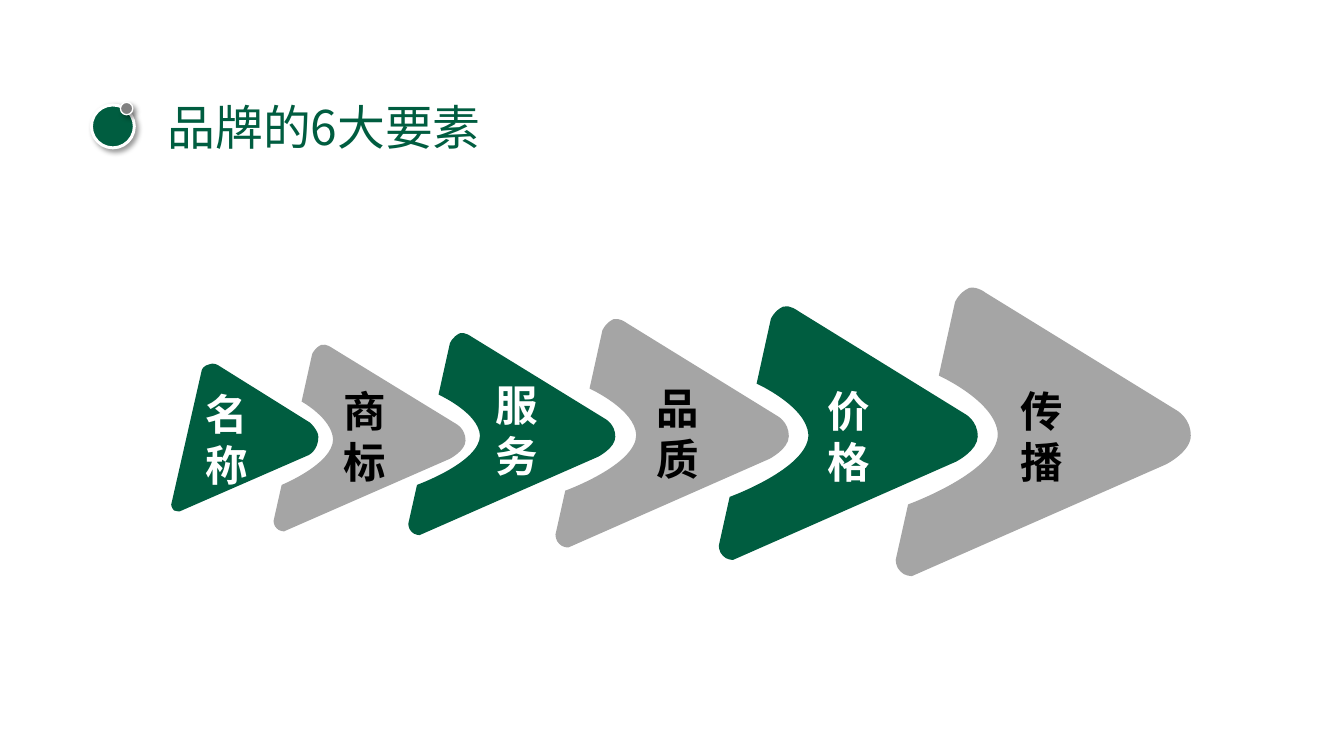
from dataclasses import dataclass

from lxml import etree
from pptx import Presentation
from pptx.dml.color import RGBColor
from pptx.enum.shapes import MSO_SHAPE
from pptx.oxml.ns import qn
from pptx.shapes.autoshape import Shape
from pptx.shapes.shapetree import SlideShapes
from pptx.util import Cm, Pt

OVAL = MSO_SHAPE.OVAL

Point = tuple[float, float]
Bend = list[Point]


@dataclass(frozen=True)
class Theme:
    green: RGBColor = RGBColor(0x00, 0x5D, 0x40)
    gray: RGBColor = RGBColor(0xA5, 0xA5, 0xA5)
    dark: RGBColor = RGBColor(0x80, 0x80, 0x80)
    white: RGBColor = RGBColor(0xFF, 0xFF, 0xFF)
    black: RGBColor = RGBColor(0x00, 0x00, 0x00)
    head: Pt = Pt(36)
    label: Pt = Pt(32)
    latin: str = "Calibri"
    asian: str = "Noto Sans CJK SC"


THEME = Theme()


@dataclass(frozen=True)
class Box:
    """A place on the slide, in centimetres."""
    left: float
    top: float
    width: float
    height: float

    def lengths(self) -> tuple[Cm, Cm, Cm, Cm]:
        return Cm(self.left), Cm(self.top), Cm(self.width), Cm(self.height)


@dataclass(frozen=True)
class Arrow:
    text: str
    box: Box
    bends: list[Bend]
    label: Box


@dataclass(frozen=True)
class Dot:
    box: Box
    fill: RGBColor
    border: float


def chevron(notch: float) -> list[Bend]:
    """Bends in percent of the box: start, pull, middle, pull, end."""
    return [
        [(95.1, 42.8), (100, 45.4), (100, 51.6), (100, 57.2), (91.6, 61.5)],
        [(5.5, 100), (2.9, 100), (1.6, 98.4), (0, 97), (0, 94.4)],
        [(4.2, 75.3), (notch, 64.1), (notch, 51), (notch - 0.6, 39.8), (14.6, 30.9)],
        [(20.1, 5.6), (21.4, 2.3), (24.9, 0.7), (27.5, 0), (30.4, 2.3)],
    ]


WEDGE = [
    [(94.2, 40.4), (100, 45.5), (100, 50), (100, 59), (93.5, 62.2)],
    [(5.8, 100), (3.2, 100), (1.9, 99.4), (0, 97.4), (0, 95.5)],
    [(20.8, 5.1), (22.1, 1.9), (26, 1.3), (28.6, 0), (31.8, 1.9)],
]
SHALLOW = chevron(31)
DEEP = chevron(34.6)

ARROWS = [
    Arrow("名称", Box(4.55, 9.63, 3.91, 3.96), WEDGE, Box(5.21, 10.19, 1.6, 3)),
    Arrow("商标", Box(7.27, 9.13, 5.1, 4.99), SHALLOW, Box(8.88, 10.11, 1.78, 3)),
    Arrow("服务", Box(10.85, 8.82, 5.5, 5.4), DEEP, Box(12.92, 9.96, 1.4, 3)),
    Arrow("品质", Box(14.76, 8.44, 6.2, 6.11), DEEP, Box(17.2, 10.03, 1.4, 3)),
    Arrow("价格", Box(19.1, 8.1, 6.88, 6.78), DEEP, Box(21.74, 10.11, 1.4, 3)),
    Arrow("传播", Box(23.8, 7.6, 7.84, 7.71), DEEP, Box(26.87, 10.11, 1.73, 3)),
]
DOTS = [
    Dot(Box(2.43, 2.79, 1.14, 1.14), THEME.green, 2.25),
    Dot(Box(3.2, 2.72, 0.33, 0.33), THEME.dark, 1),
]


def add_text(shapes: SlideShapes, text: str, box: Box, size: Pt, color: RGBColor,
             latin: str, bold: bool) -> None:
    frame = shapes.add_textbox(*box.lengths()).text_frame
    frame.word_wrap = True
    frame.text = text
    run = frame.paragraphs[0].runs[0]
    font = run.font
    font.size, font.bold, font.name = size, bold, latin
    font.color.rgb = color
    props = run._r.get_or_add_rPr()
    etree.SubElement(props, qn("a:ea"), typeface=THEME.asian)


def round_bends(shape: Shape, count: int) -> None:
    """Turn the last six of each bend's seven nodes into two Bezier curves."""
    track = next(shape._element.iter(qn("a:path")))
    nodes = list(track)
    for bend in range(count):
        for first in (7 * bend + 1, 7 * bend + 4):
            curve = etree.Element(qn("a:cubicBezTo"))
            nodes[first].addprevious(curve)
            for node in nodes[first:first + 3]:
                curve.append(node[0])
                track.remove(node)


def add_arrow(shapes: SlideShapes, arrow: Arrow, fill: RGBColor, ink: RGBColor) -> None:
    box = arrow.box
    points = [(Cm(box.left + box.width * x / 100), Cm(box.top + box.height * y / 100))
              for start, pull, mid, push, end in arrow.bends
              for x, y in (start, start, pull, mid, push, end, end)]
    builder = shapes.build_freeform(*points[0], scale=1.0)
    builder.add_line_segments(points[1:], close=True)
    shape = builder.convert_to_shape()
    round_bends(shape, len(arrow.bends))
    shape.shadow.inherit = False
    shape.fill.solid()
    shape.fill.fore_color.rgb = fill
    shape.line.fill.background()
    add_text(shapes, arrow.text, arrow.label, THEME.label, ink, THEME.latin, True)


def cast_shadow(shape: Shape) -> None:
    shape.shadow.inherit = False
    effects = shape._element.spPr.find(qn("a:effectLst"))
    outer = etree.SubElement(effects, qn("a:outerShdw"), blurRad=str(Pt(4)),
                             dist=str(Pt(3)), dir=str(45 * 60000), rotWithShape="0")
    color = etree.SubElement(outer, qn("a:srgbClr"), val=str(THEME.black))
    etree.SubElement(color, qn("a:alpha"), val="40000")


def add_dot(shapes: SlideShapes, dot: Dot) -> None:
    shape = shapes.add_shape(OVAL, *dot.box.lengths())
    shape.fill.solid()
    shape.fill.fore_color.rgb = dot.fill
    shape.line.color.rgb = THEME.white
    shape.line.width = Pt(dot.border)
    cast_shadow(shape)


def main() -> None:
    deck = Presentation()
    deck.slide_width, deck.slide_height = Cm(35.71), Cm(20.09)
    shapes = deck.slides.add_slide(deck.slide_layouts[6]).shapes
    for index, arrow in enumerate(ARROWS):
        if index % 2:
            add_arrow(shapes, arrow, THEME.gray, THEME.black)
        else:
            add_arrow(shapes, arrow, THEME.green, THEME.white)
    add_text(shapes, "品牌的6大要素", Box(4.2, 2.46, 17.93, 1.8), THEME.head,
             THEME.green, THEME.asian, False)
    for dot in DOTS:
        add_dot(shapes, dot)
    deck.save("out.pptx")


if __name__ == "__main__":
    main()
